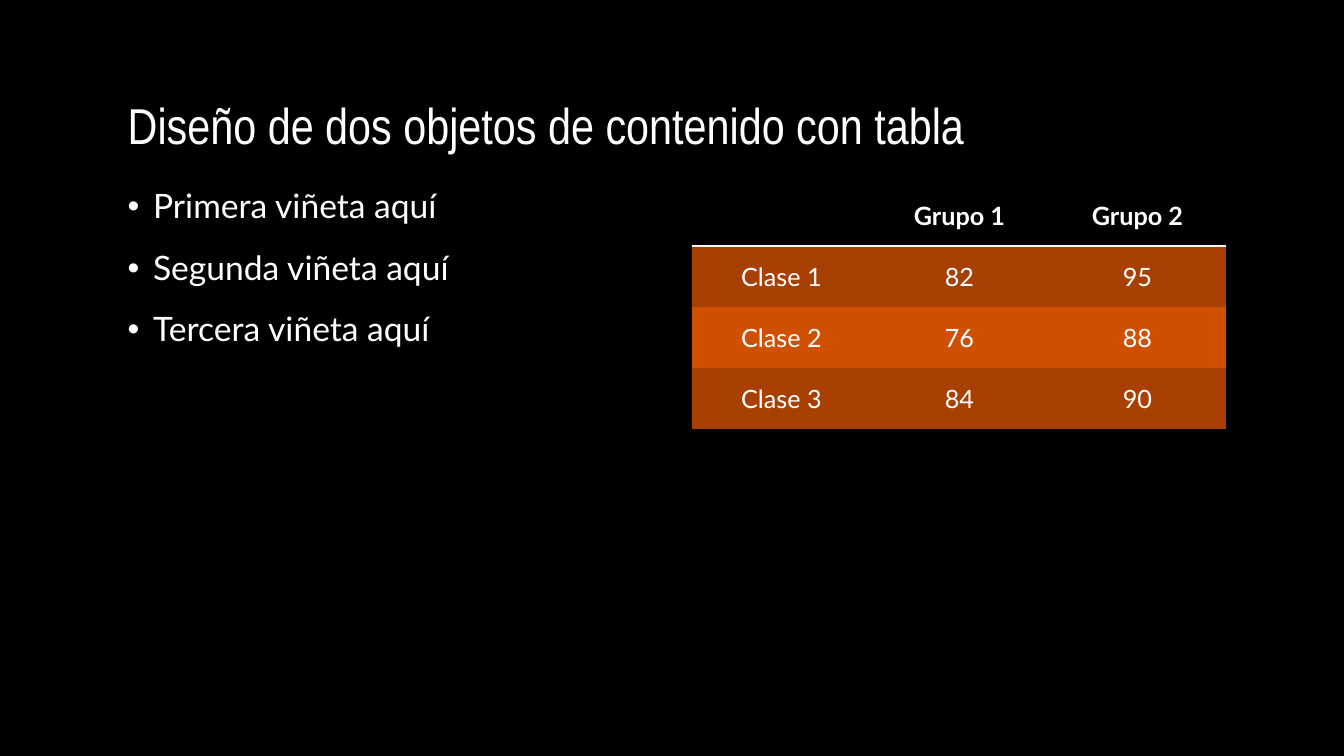
from lxml.etree import SubElement
from pptx import Presentation
from pptx.dml.color import RGBColor
from pptx.enum.text import MSO_ANCHOR, PP_ALIGN
from pptx.oxml import parse_xml
from pptx.oxml.ns import nsdecls, qn
from pptx.util import Cm, Pt

BLACK = RGBColor(0x00, 0x00, 0x00)
WHITE = RGBColor(0xFF, 0xFF, 0xFF)
DARK_ORANGE = RGBColor(0xA7, 0x40, 0x02)
ORANGE = RGBColor(0xD0, 0x50, 0x02)

TITLE_FORMAT = {"name": "Arial Narrow", "size": Pt(36), "bold": False}
BULLET_FORMAT = {"name": "Lato", "size": Pt(24), "bold": False}
HEADER_FORMAT = {"name": "Lato", "size": Pt(18), "bold": True}
CELL_FORMAT = {"name": "Lato", "size": Pt(18), "bold": False}

LEFT_MARGIN = Cm(2.97)
CONTENT_TOP = Cm(4.66)
CONTENT_WIDTH = Cm(13.46)
PLAIN_TABLE_STYLE = "{2D5ABB26-0587-4C30-8999-92F81FD0307C}"

BULLETS = ["Primera viñeta aquí", "Segunda viñeta aquí", "Tercera viñeta aquí"]
TABLE_ROWS = [
    ["", "Grupo 1", "Grupo 2"],
    ["Clase 1", "82", "95"],
    ["Clase 2", "76", "88"],
    ["Clase 3", "84", "90"],
]


def add_run(paragraph, text, font_format):
    run = paragraph.add_run()
    run.text = text
    for attribute, value in font_format.items():
        setattr(run.font, attribute, value)
    run.font.color.rgb = WHITE


def add_text_frame(slide, left, top, width, height, anchor):
    text_frame = slide.shapes.add_textbox(left, top, width, height).text_frame
    text_frame.word_wrap = True
    text_frame.vertical_anchor = anchor
    return text_frame


def add_title(slide, text):
    text_frame = add_text_frame(
        slide, LEFT_MARGIN, Cm(0.85), Cm(27.94), Cm(3.18), MSO_ANCHOR.BOTTOM
    )
    paragraph = text_frame.paragraphs[0]
    paragraph.line_spacing = 0.9
    add_run(paragraph, text, TITLE_FORMAT)


def set_bullet(paragraph):
    properties = paragraph._p.get_or_add_pPr()
    indent = Cm(0.64)
    properties.set("marL", str(indent))
    properties.set("indent", str(-indent))
    SubElement(properties, qn("a:buFont")).set("typeface", "Arial")
    SubElement(properties, qn("a:buChar")).set("char", "•")


def add_bullet_list(slide, items):
    text_frame = add_text_frame(
        slide, LEFT_MARGIN, CONTENT_TOP, CONTENT_WIDTH, Cm(12.07), MSO_ANCHOR.TOP
    )
    for index, item in enumerate(items):
        paragraph = text_frame.add_paragraph() if index else text_frame.paragraphs[0]
        set_bullet(paragraph)
        paragraph.line_spacing = 0.9
        if index:
            paragraph.space_before = Pt(18)
        add_run(paragraph, item, BULLET_FORMAT)


def add_bottom_border(cell, color, width):
    border = parse_xml(
        f'<a:lnB {nsdecls("a")} w="{width}"><a:solidFill>'
        f'<a:srgbClr val="{color}"/></a:solidFill></a:lnB>'
    )
    cell._tc.get_or_add_tcPr().insert(0, border)


def format_cell(cell, text, fill_color, font_format):
    cell.fill.solid()
    cell.fill.fore_color.rgb = fill_color
    cell.vertical_anchor = MSO_ANCHOR.MIDDLE
    if text:
        paragraph = cell.text_frame.paragraphs[0]
        paragraph.alignment = PP_ALIGN.CENTER
        add_run(paragraph, text, font_format)


def add_score_table(slide, rows):
    row_height = Cm(1.54)
    table = slide.shapes.add_table(
        len(rows), len(rows[0]), Cm(17.45), CONTENT_TOP,
        CONTENT_WIDTH, row_height * len(rows),
    ).table
    table._tbl.tblPr.find(qn("a:tableStyleId")).text = PLAIN_TABLE_STYLE
    table.horz_banding = False
    for row_index, texts in enumerate(rows):
        is_header = row_index == 0
        band_color = DARK_ORANGE if row_index % 2 else ORANGE
        for cell, text in zip(table.rows[row_index].cells, texts):
            if is_header:
                format_cell(cell, text, BLACK, HEADER_FORMAT)
                add_bottom_border(cell, WHITE, Pt(2))
            else:
                format_cell(cell, text, band_color, CELL_FORMAT)


def main():
    presentation = Presentation()
    presentation.slide_width = Cm(33.87)
    presentation.slide_height = Cm(19.05)
    slide = presentation.slides.add_slide(presentation.slide_layouts[6])
    slide.background.fill.solid()
    slide.background.fill.fore_color.rgb = BLACK
    add_title(slide, "Diseño de dos objetos de contenido con tabla")
    add_bullet_list(slide, BULLETS)
    add_score_table(slide, TABLE_ROWS)
    presentation.save("out.pptx")


if __name__ == "__main__":
    main()
